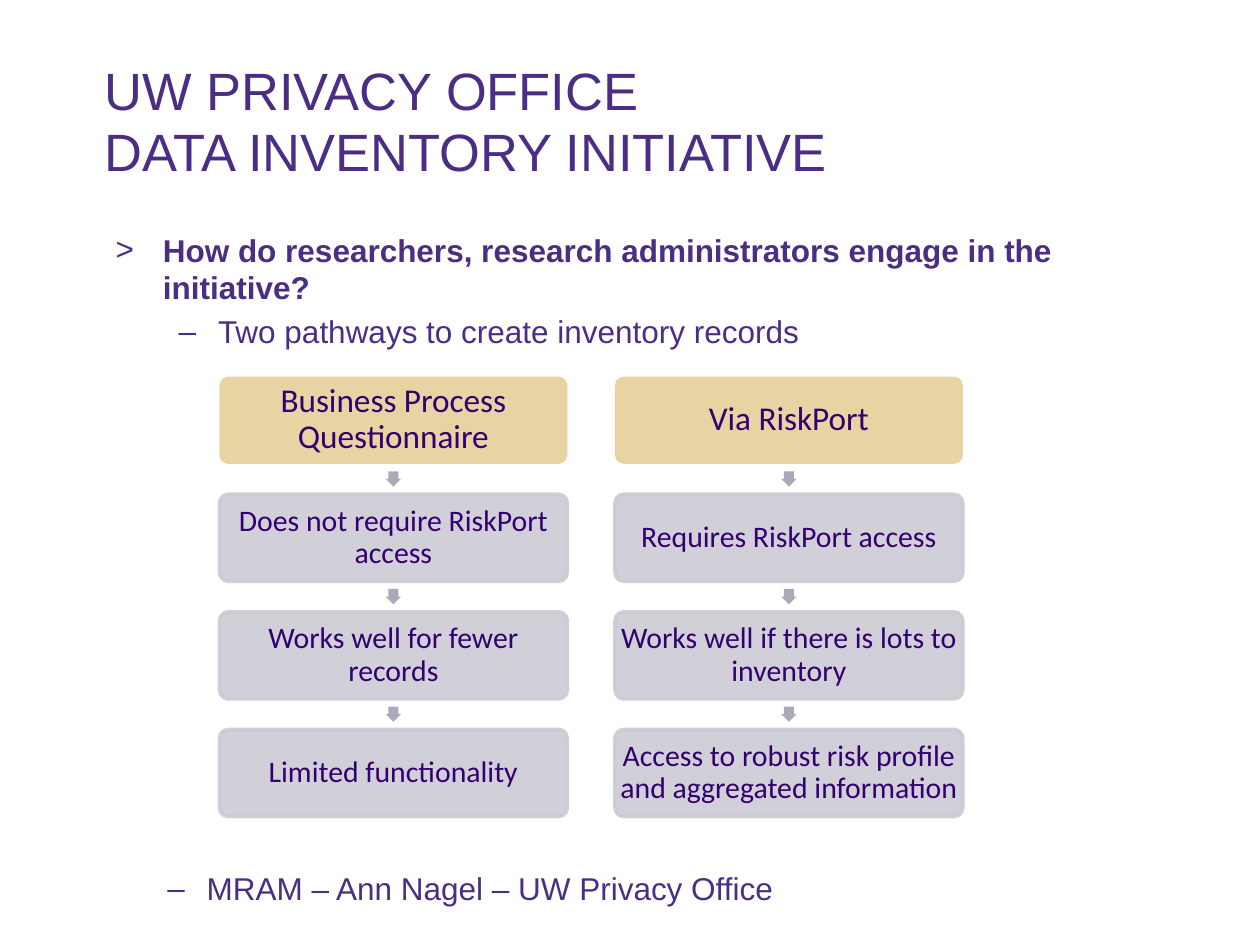
import lxml.etree
import pptx
import pptx.dml.color
import pptx.enum.shapes
import pptx.enum.text
import pptx.oxml.ns
import pptx.util

Pt = pptx.util.Pt
RGBColor = pptx.dml.color.RGBColor
SHAPE = pptx.enum.shapes.MSO_SHAPE
ANCHOR = pptx.enum.text.MSO_ANCHOR
ALIGN = pptx.enum.text.PP_ALIGN

PURPLE = RGBColor(0x4B, 0x2E, 0x83)
DARK_PURPLE = RGBColor(0x33, 0x00, 0x6F)
GOLD = RGBColor(0xE8, 0xD3, 0xA2)
LAVENDER = RGBColor(0xCC, 0xCA, 0xD4)
ARROW_GREY = RGBColor(0xAB, 0xA8, 0xB9)

# Pathway grid, in points
GRID_LEFT, GRID_TOP = 125.4, 215.2
COLUMN_STEP, ROW_STEP = 226, 67.2
CARD_WIDTH, CARD_HEIGHT = 198.8, 49.8
ARROW_SIZE = 8.7

PATHWAYS = [
    ["Business Process Questionnaire", "Does not require RiskPort access",
     "Works well for fewer records", "Limited functionality"],
    ["Via RiskPort", "Requires RiskPort access",
     "Works well if there is lots to inventory",
     "Access to robust risk profile and aggregated information"],
]


def add_element(parent, tag, **attributes):
    return lxml.etree.SubElement(parent, pptx.oxml.ns.qn(tag), attributes)


def set_values(target, values):
    for name, value in values.items():
        setattr(target, name, value)


class SlideBuilder:
    body_font = {"name": "Arial", "size": Pt(18), "bold": False}
    title_font = {"name": "Arial", "size": Pt(30)}

    def __init__(self, slide):
        self.slide = slide

    def paragraph(self, frame, text, font, color, first, **layout):
        paragraph = frame.paragraphs[0] if first else frame.add_paragraph()
        set_values(paragraph, layout)
        run = paragraph.add_run()
        run.text = text
        set_values(run.font, font)
        run.font.color.rgb = color
        return paragraph

    def text_box(self, left, top, width, height, anchor):
        box = self.slide.shapes.add_textbox(Pt(left), Pt(top), Pt(width), Pt(height))
        set_values(box.text_frame, {"word_wrap": True, "vertical_anchor": anchor})
        return box.text_frame

    def bullet(self, frame, text, mark, indent, hanging, first=True, bold=False, **layout):
        font = {**self.body_font, "bold": bold}
        paragraph = self.paragraph(frame, text, font, PURPLE, first, **layout)
        properties = paragraph._p.get_or_add_pPr()
        properties.set("marL", str(Pt(indent)))
        properties.set("indent", str(-Pt(hanging)))
        color = add_element(properties, "a:buClr")
        add_element(color, "a:srgbClr", val=str(PURPLE))
        add_element(properties, "a:buFont", typeface="Arial")
        add_element(properties, "a:buChar", char=mark)

    def shape(self, kind, left, top, width, height, fill, adjustments):
        shape = self.slide.shapes.add_shape(kind, Pt(left), Pt(top), Pt(width), Pt(height))
        shape.shadow.inherit = False
        shape.fill.solid()
        shape.fill.fore_color.rgb = fill
        shape.line.fill.background()
        for index, value in enumerate(adjustments):
            shape.adjustments[index] = value
        return shape

    def card(self, left, top, text, header):
        shape = self.shape(SHAPE.ROUNDED_RECTANGLE, left, top, CARD_WIDTH, CARD_HEIGHT,
                           GOLD if header else LAVENDER, [0.1])
        if not header:
            shape.line.color.rgb = LAVENDER
            shape.line.width = Pt(2)
            for color in shape._element.spPr.iter(pptx.oxml.ns.qn("a:srgbClr")):
                add_element(color, "a:alpha", val="90000")
        margin = Pt(2 if header else 1.5)
        frame = shape.text_frame
        set_values(frame, {"word_wrap": True, "vertical_anchor": ANCHOR.MIDDLE,
                           "margin_left": margin, "margin_right": margin,
                           "margin_top": margin, "margin_bottom": margin})
        font = {"name": "Calibri", "size": Pt(19 if header else 17)}
        self.paragraph(frame, text, font, DARK_PURPLE, True,
                       alignment=ALIGN.CENTER, line_spacing=0.9)

    def down_arrow(self, center_x, center_y):
        arrow = self.shape(SHAPE.RIGHT_ARROW, center_x - ARROW_SIZE / 2,
                           center_y - ARROW_SIZE / 2, ARROW_SIZE, ARROW_SIZE,
                           ARROW_GREY, [0.667, 0.5])
        arrow.rotation = 90


def main():
    presentation = pptx.Presentation()
    presentation.slide_width, presentation.slide_height = Pt(720), Pt(540)
    builder = SlideBuilder(presentation.slides.add_slide(presentation.slide_layouts[6]))

    # Title
    title = builder.text_box(52.5, 29.5, 644.4, 77.8, ANCHOR.BOTTOM)
    builder.paragraph(title, "UW PRIVACY OFFICE", builder.title_font, PURPLE, True,
                      line_spacing=0.8)
    builder.paragraph(title, "DATA INVENTORY INITIATIVE", builder.title_font, PURPLE, False,
                      line_spacing=0.8, space_before=Pt(6))

    # Question and answer
    question = builder.text_box(59, 128.2, 632.9, 77.8, ANCHOR.TOP)
    builder.bullet(question,
                   "How do researchers, research administrators engage in the initiative?",
                   ">", 27, 27, bold=True)
    builder.bullet(question, "Two pathways to create inventory records", "–", 58.5, 22.5,
                   first=False, level=1, space_before=Pt(3.6))

    # Presenter line
    presenter = builder.text_box(52.5, 496.1, 569.5, 25.9, ANCHOR.BOTTOM)
    builder.bullet(presenter, "MRAM – Ann Nagel – UW Privacy Office", "–", 58.5, 22.5,
                   level=1, line_spacing=1.5)

    # Two pathways, each a header with three steps
    for column, steps in enumerate(PATHWAYS):
        left = GRID_LEFT + column * COLUMN_STEP
        for row, text in enumerate(steps):
            top = GRID_TOP + row * ROW_STEP
            if row:
                gap = ROW_STEP - CARD_HEIGHT
                builder.down_arrow(left + CARD_WIDTH / 2, top - gap / 2)
            builder.card(left, top, text, header=row == 0)

    presentation.save("out.pptx")


if __name__ == "__main__":
    main()
